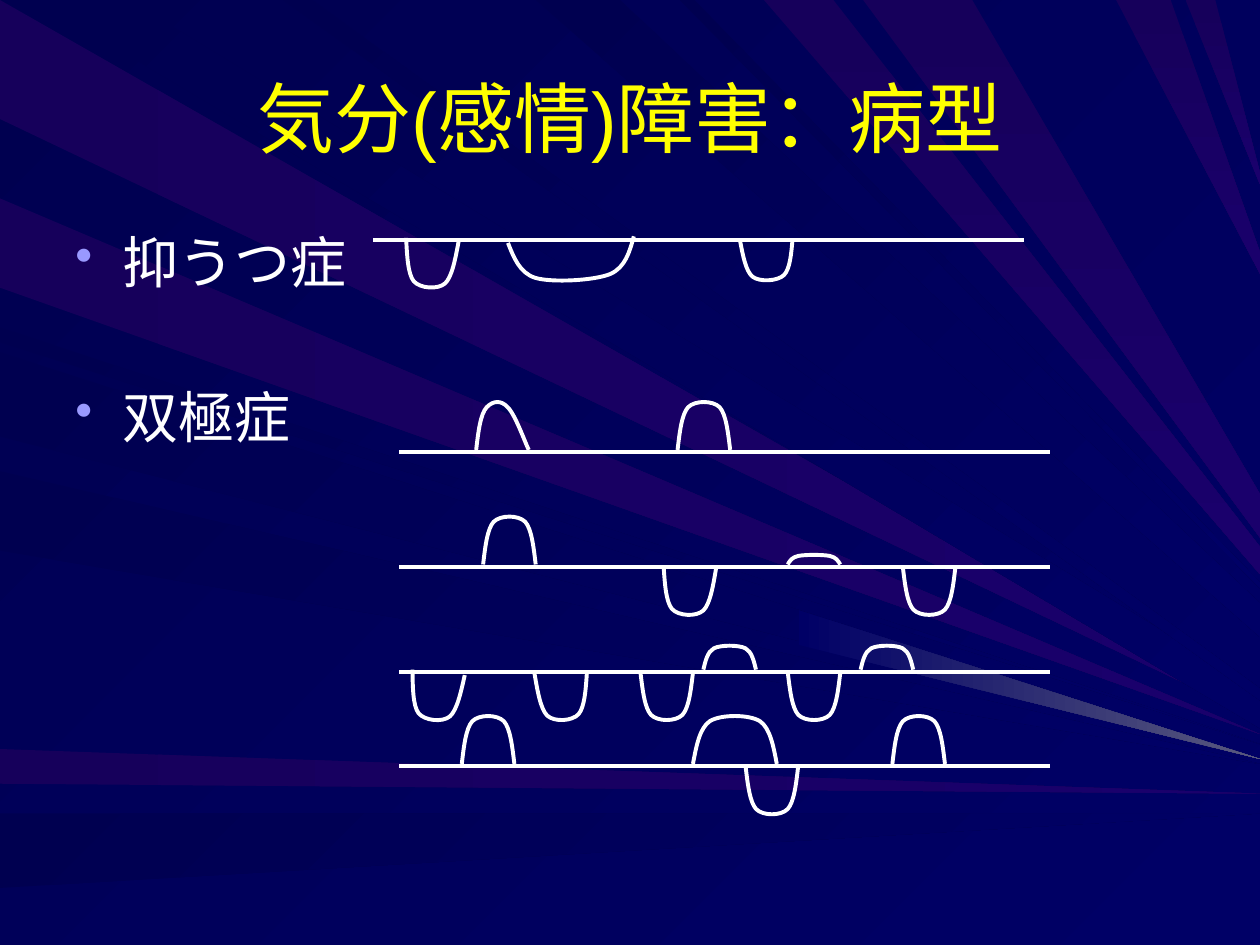
from lxml import etree
from pptx import Presentation
from pptx.dml.color import RGBColor as RGB
from pptx.enum.shapes import MSO_CONNECTOR as CONN
from pptx.enum.text import MSO_ANCHOR as ANCHOR, PP_ALIGN as ALIGN
from pptx.oxml.ns import qn
from pptx.util import Cm, Pt

COLORS = {"title": "FFFF00", "text": "FFFFFF", "bullet": "9999FF", "line": "FFFFFF",
          "dark": "000050", "navy": "000066", "dusk": "16005B", "plum": "1A006C",
          "glow": "5A5A7F"}
FONT = "Arial"
TITLE = "気分(感情)障害：病型"
BULLETS = ["抑うつ症", "双極症"]

WIDTH, HEIGHT = 25.4, 19.05
LEFT_RAYS = [
    ("dark", "navy", 6.6, 6.9, 15),
    ("dark", "navy", 7.1, 8.8, 15.3),
    ("dark", "navy", 9.5, 11.1, 15.4),
    ("dark", "navy", 16.4, 17.9, 16.4),
    ("dusk", "plum", 0, 2.4, 14.5),
    ("dusk", "plum", 4, 5.8, 14.8),
    ("dusk", "plum", 15.1, 15.8, 16),
]
TOP_RAYS = [
    ("dark", "navy", 0.7, 2.6, 14.3),
    ("dark", "navy", 5.7, 6.3, 14),
    ("dark", "navy", 10.8, 12.5, 12.5),
    ("dark", "navy", 13.7, 14, 11.8),
    ("dusk", "plum", 15.4, 16.8, 11.3),
    ("dusk", "plum", 17.4, 19.6, 10.4),
    ("dusk", "plum", 22.5, 23.6, 5.3),
    ("dusk", "plum", 23.9, 24.5, 3.6),
]
TIP_RATIO = 0.4
GLOW_RAY = [(16.1, 12.3), (WIDTH, 15.3), (16.1, 13)]

RISE = [(0, 100), (4, 64), (8, 28), (20, 14), (33, 0)]
ARCH = RISE + [(100 - u, v) for u, v in reversed(RISE)]
SKEWED = RISE + [(48, 0), (60, 14), (74, 28), (93, 85), (100, 100)]

AXIS_LENGTH, HILL_GAP = 13.12, 0.05
AXIS_LEFT = 8.05
EPISODE = {"w": 1.06, "h": 1, "outline": ARCH, "turn": 0}
COURSES = [
    {"axis": (7.52, 4.83), "hills": [],
     "dips": [{"x": 8.15, "turn": 184}, {"x": 10.26, "w": 2.54, "h": 0.85, "turn": 177},
              {"x": 14.94, "h": 0.85, "turn": 177}]},
    {"axis": (AXIS_LEFT, 9.12), "dips": [],
     "hills": [{"x": 9.6, "outline": SKEWED}, {"x": 13.66}]},
    {"axis": (AXIS_LEFT, 11.43),
     "hills": [{"x": 9.74}, {"x": 15.88, "h": 0.2}],
     "dips": [{"x": 13.35, "turn": 183}, {"x": 18.2}]},
    {"axis": (AXIS_LEFT, 13.55),
     "hills": [{"x": 14.18, "h": 0.5}, {"x": 17.35, "h": 0.5}],
     "dips": [{"x": 8.26, "turn": 186}, {"x": 10.8, "turn": 177}, {"x": 12.91},
              {"x": 15.88}]},
    {"axis": (AXIS_LEFT, 15.45),
     "hills": [{"x": 9.31}, {"x": 13.97, "w": 1.69}, {"x": 17.99}],
     "dips": [{"x": 15.03}]},
]


def rgb(name):
    return RGB.from_string(COLORS[name])


def paint(fill, start, end, angle):
    fill.gradient()
    fill.gradient_angle = -angle % 360
    for stop, name in zip(fill.gradient_stops, (start, end)):
        stop.color.rgb = rgb(name)


def stroke(sp):
    sp.line.color.rgb = rgb("line")
    sp.line.width = Pt(2.25)


def add_outline(shapes, points, close):
    points = [(Cm(x), Cm(y)) for x, y in points]
    fb = shapes.build_freeform(*points[0])
    fb.add_line_segments(points[1:], close=close)
    sp = fb.convert_to_shape()
    sp.shadow.inherit = False
    return sp


def add_ray(shapes, start, end, angle, points):
    sp = add_outline(shapes, points, True)
    paint(sp.fill, start, end, angle)
    sp.line.fill.background()


def add_rays(shapes):
    for start, end, a, b, tip in LEFT_RAYS:
        angle = 45 if end == "navy" else 0
        add_ray(shapes, start, end, angle, [(0, a), (WIDTH, tip), (0, b)])
    for start, end, a, b, tip in TOP_RAYS:
        angle = 45 if end == "navy" else 90
        half = (b - a) * TIP_RATIO / 2
        add_ray(shapes, start, end, angle,
                [(a, 0), (WIDTH, tip + half), (WIDTH, tip - half), (b, 0)])
    add_ray(shapes, "navy", "glow", 0, GLOW_RAY)


def add_axis(shapes, x, y):
    c = shapes.add_connector(CONN.STRAIGHT, Cm(x), Cm(y), Cm(x + AXIS_LENGTH), Cm(y))
    stroke(c)
    etree.SubElement(c._element.spPr, qn("a:effectLst"))


def add_curve(shapes, x, y, w, h, outline, turn):
    points = [(x + w * u / 100, y + h * v / 100) for u, v in outline]
    sp = add_outline(shapes, points, False)
    segments = list(sp._element.iter(qn("a:lnTo")))
    route = segments[0].getparent()
    for i in range(0, len(segments), 3):
        bezier = etree.SubElement(route, qn("a:cubicBezTo"))
        for segment in segments[i:i + 3]:
            bezier.append(segment[0])
            route.remove(segment)
    sp.fill.background()
    stroke(sp)
    sp.rotation = turn


def add_course(shapes, course):
    x, y = course["axis"]
    add_axis(shapes, x, y)
    for hill in course["hills"]:
        episode = EPISODE | hill
        add_curve(shapes, y=y - HILL_GAP - episode["h"], **episode)
    for dip in course["dips"]:
        add_curve(shapes, y=y, **(EPISODE | {"turn": 180} | dip))


def add_text_box(shapes, x, y, w, h, anchor):
    tf = shapes.add_textbox(Cm(x), Cm(y), Cm(w), Cm(h)).text_frame
    tf.word_wrap = True
    tf.vertical_anchor = anchor
    return tf


def add_run(p, text, size, color):
    r = p.add_run()
    r.text = text
    r.font.name = FONT
    r.font.size = Pt(size)
    r.font.color.rgb = rgb(color)


def add_bullet(p):
    pPr = p._p.get_or_add_pPr()
    pPr.set("marL", str(Cm(0.95)))
    pPr.set("indent", str(-Cm(0.95)))
    color = etree.SubElement(pPr, qn("a:buClr"))
    etree.SubElement(color, qn("a:srgbClr"), val=COLORS["bullet"])
    etree.SubElement(pPr, qn("a:buSzPct"), val="90000")
    etree.SubElement(pPr, qn("a:buChar"), char="•")


def main():
    prs = Presentation()
    prs.slide_width, prs.slide_height = Cm(WIDTH), Cm(HEIGHT)
    slide = prs.slides.add_slide(prs.slide_layouts[6])
    shapes = slide.shapes
    paint(slide.background.fill, "dark", "navy", 45)
    add_rays(shapes)

    p = add_text_box(shapes, 1.27, 0.76, 22.86, 3.18, ANCHOR.MIDDLE).paragraphs[0]
    p.alignment = ALIGN.CENTER
    add_run(p, TITLE, 44, "title")

    tf = add_text_box(shapes, 1.27, 4.47, 22.86, 12.57, ANCHOR.TOP)
    for i, text in enumerate(BULLETS):
        p = tf.paragraphs[0] if i == 0 else tf.add_paragraph()
        if i:
            p.space_before = Pt(50)
        add_bullet(p)
        add_run(p, text, 32, "text")

    for course in COURSES:
        add_course(shapes, course)

    prs.save("out.pptx")


if __name__ == "__main__":
    main()
